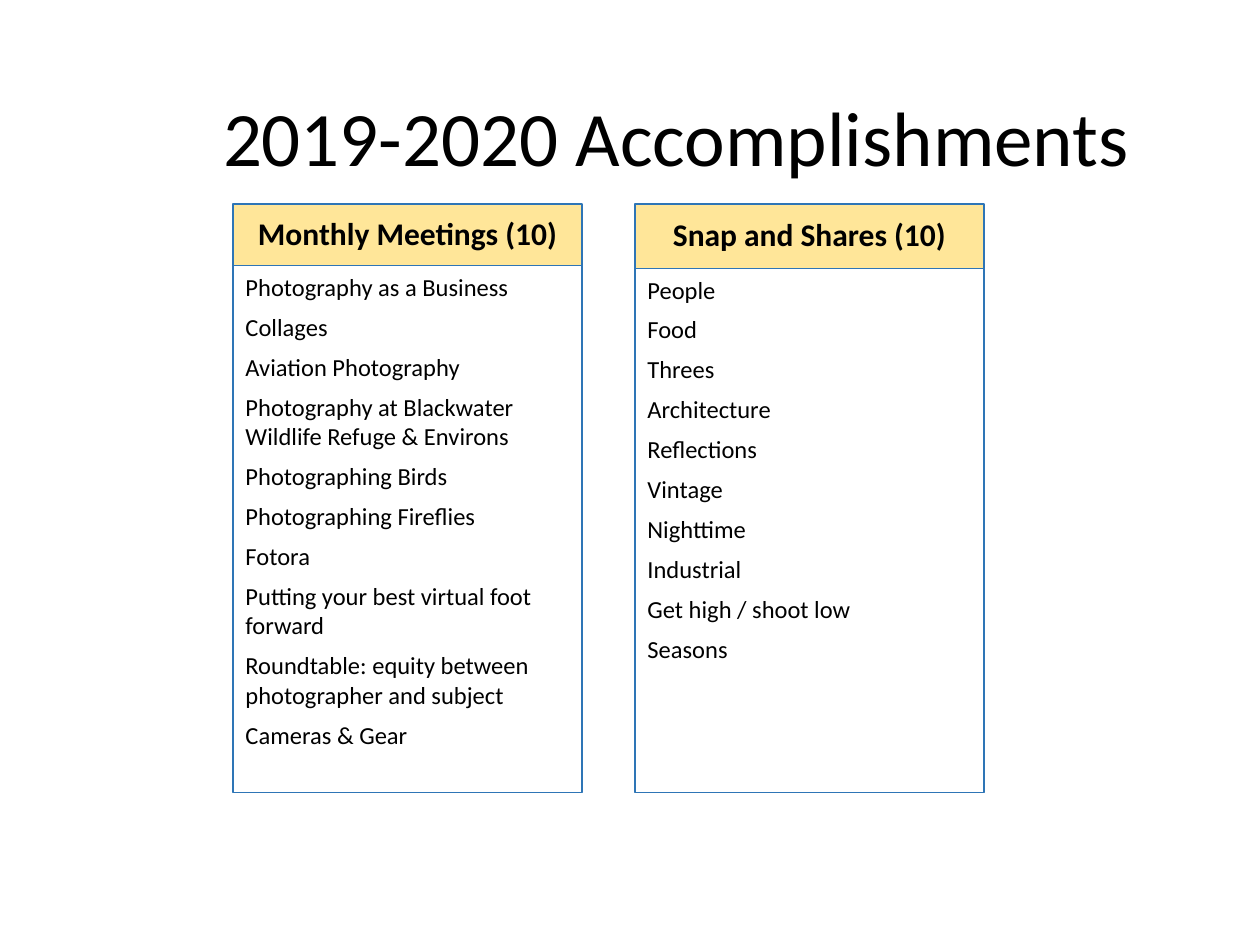
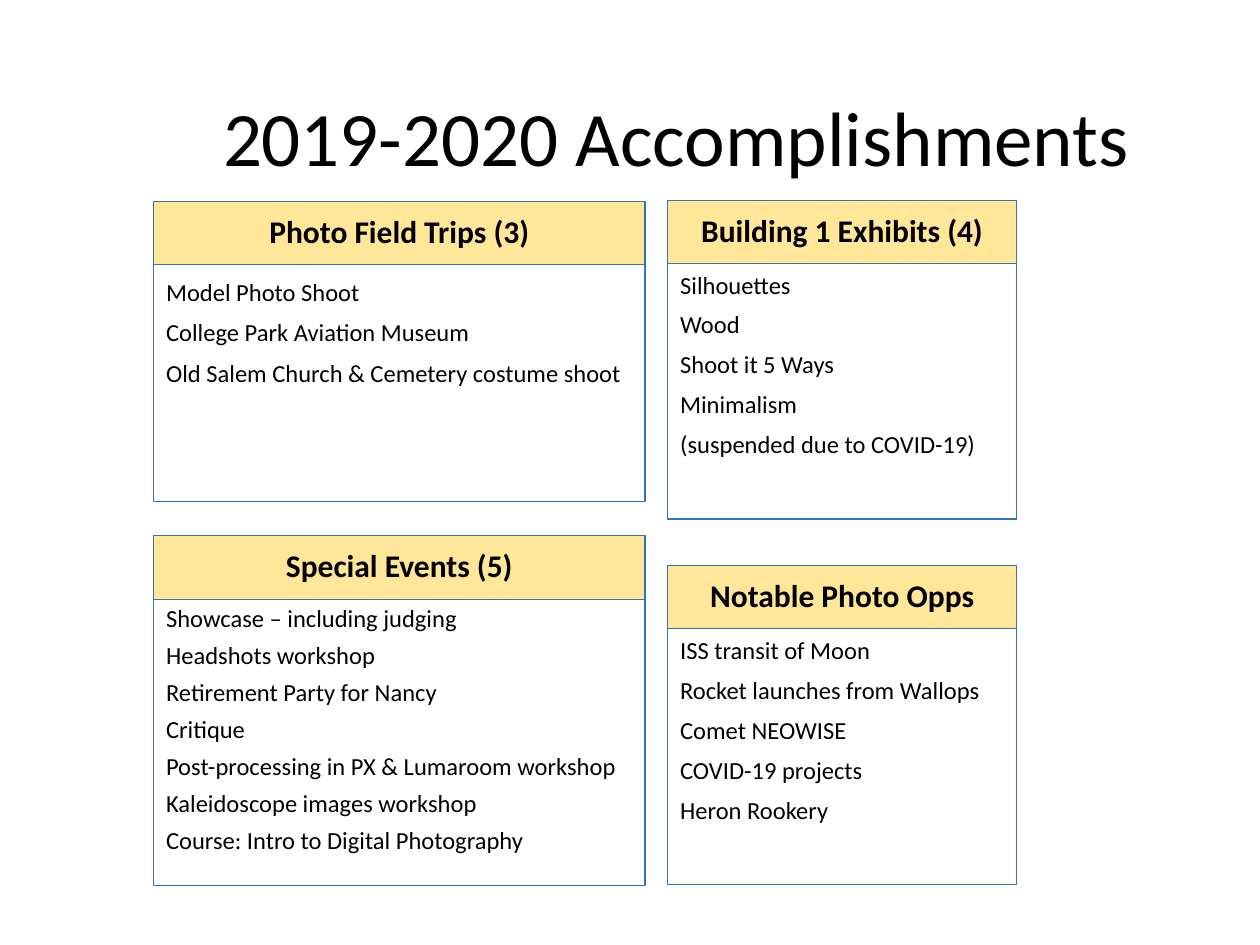
from dataclasses import dataclass

from pptx import Presentation
from pptx import util as u
from pptx.dml import color
from pptx.enum import shapes, text


@dataclass(frozen=True)
class Theme:
    font: str = "Calibri"
    ink: str = "000000"
    band: str = "FFE699"
    outline: str = "2E75B6"
    title_size: int = 44
    heading_size: int = 18
    item_size: int = 14
    outline_width: float = 0.75
    tight: float = 0.9


@dataclass(frozen=True)
class Box:
    column: float
    row: float
    columns: float
    rows: float

    def split_top(self, rows):
        return (Box(self.column, self.row, self.columns, rows),
                Box(self.column, self.row + rows, self.columns, self.rows - rows))


@dataclass(frozen=True)
class Spacing:
    line: float = 1.0
    before: int = 3
    after: int = 3


@dataclass(frozen=True)
class Panel:
    heading: str
    items: tuple
    box: Box
    spacing: Spacing = Spacing()
    heading_rows: float = 5


THEME = Theme()
SLIDE_WIDTH, SLIDE_HEIGHT = u.Inches(10), u.Inches(7.5)
GRID_COLUMNS, GRID_ROWS = 100, 75
TITLE_ONLY = 5
TITLE = "2019-2020 Accomplishments"
TITLE_BOX = Box(16.7, 4, 76.4, 14.5)
NARROW, WIDE = 27.7, 39

MEETINGS_AND_SHARES = (
    Panel("Monthly Meetings (10)", (
        "Photography as a Business",
        "Collages",
        "Aviation Photography",
        "Photography at Blackwater Wildlife Refuge & Environs",
        "Photographing Birds",
        "Photographing Fireflies",
        "Fotora",
        "Putting your best virtual foot forward",
        "Roundtable: equity between photographer and subject",
        "Cameras & Gear",
    ), Box(18.5, 16.2, NARROW, 46.7), heading_rows=4.9),
    Panel("Snap and Shares (10)", (
        "People", "Food", "Threes", "Architecture", "Reflections",
        "Vintage", "Nighttime", "Industrial", "Get high / shoot low", "Seasons",
    ), Box(50.4, 16.2, NARROW, 46.7), heading_rows=5.1),
)

TRIPS_AND_EVENTS = (
    Panel("Photo Field Trips (3)", (
        "Model Photo Shoot",
        "College Park Aviation Museum",
        "Old Salem Church & Cemetery costume shoot",
    ), Box(12.2, 16, WIDE, 23.8), Spacing(line=1.2, before=0)),
    Panel("Building 1 Exhibits (4)", (
        "Silhouettes", "Wood", "Shoot it 5 Ways", "Minimalism",
        "(suspended due to COVID-19)",
    ), Box(53, 15.9, NARROW, 25.3)),
    Panel("Special Events (5)", (
        "Showcase – including judging",
        "Headshots workshop",
        "Retirement Party for Nancy",
        "Critique",
        "Post-processing in PX & Lumaroom workshop",
        "Kaleidoscope images workshop",
        "Course: Intro to Digital Photography",
    ), Box(12.2, 42.5, WIDE, 27.8), Spacing(line=THEME.tight), heading_rows=5.1),
    Panel("Notable Photo Opps", (
        "ISS transit of Moon", "Rocket launches from Wallops",
        "Comet NEOWISE", "COVID-19 projects", "Heron Rookery",
    ), Box(53, 44.9, NARROW, 25.3)),
)


def place(box):
    column, row = SLIDE_WIDTH / GRID_COLUMNS, SLIDE_HEIGHT / GRID_ROWS
    return (round(box.column * column), round(box.row * row),
            round(box.columns * column), round(box.rows * row))


def write(paragraph, words, size, bold=False, align=text.PP_ALIGN.LEFT, line=THEME.tight):
    paragraph.alignment = align
    paragraph.line_spacing = line
    run = paragraph.add_run()
    run.text = words
    run.font.name = THEME.font
    run.font.size = u.Pt(size)
    run.font.bold = bold
    run.font.color.rgb = color.RGBColor.from_string(THEME.ink)


def add_title(slide, words, box):
    title = slide.shapes.title
    title.left, title.top, title.width, title.height = place(box)
    frame = title.text_frame
    frame.auto_size = text.MSO_AUTO_SIZE.NONE
    frame.vertical_anchor = text.MSO_ANCHOR.MIDDLE
    write(frame.paragraphs[0], words, THEME.title_size)


def add_cell(slide, box, anchor, fill=None):
    cell = slide.shapes.add_shape(shapes.MSO_SHAPE.RECTANGLE, *place(box))
    cell.shadow.inherit = False
    if fill:
        cell.fill.solid()
        cell.fill.fore_color.rgb = color.RGBColor.from_string(fill)
    else:
        cell.fill.background()
    cell.line.color.rgb = color.RGBColor.from_string(THEME.outline)
    cell.line.width = u.Pt(THEME.outline_width)
    frame = cell.text_frame
    frame.word_wrap = True
    frame.vertical_anchor = anchor
    return frame


def add_panel(slide, panel):
    heading_box, list_box = panel.box.split_top(panel.heading_rows)
    heading = add_cell(slide, heading_box, text.MSO_ANCHOR.MIDDLE, THEME.band)
    write(heading.paragraphs[0], panel.heading, THEME.heading_size,
          bold=True, align=text.PP_ALIGN.CENTER)

    listing = add_cell(slide, list_box, text.MSO_ANCHOR.TOP)
    for index, item in enumerate(panel.items):
        paragraph = listing.add_paragraph() if index else listing.paragraphs[0]
        if index:
            paragraph.space_before = u.Pt(panel.spacing.before)
        paragraph.space_after = u.Pt(panel.spacing.after)
        write(paragraph, item, THEME.item_size, line=panel.spacing.line)


def add_accomplishments(deck, panels):
    slide = deck.slides.add_slide(deck.slide_layouts[TITLE_ONLY])
    add_title(slide, TITLE, TITLE_BOX)
    for panel in panels:
        add_panel(slide, panel)


def main():
    deck = Presentation()
    deck.slide_width, deck.slide_height = SLIDE_WIDTH, SLIDE_HEIGHT
    for panels in (MEETINGS_AND_SHARES, TRIPS_AND_EVENTS):
        add_accomplishments(deck, panels)
    deck.save("out.pptx")


if __name__ == "__main__":
    main()
